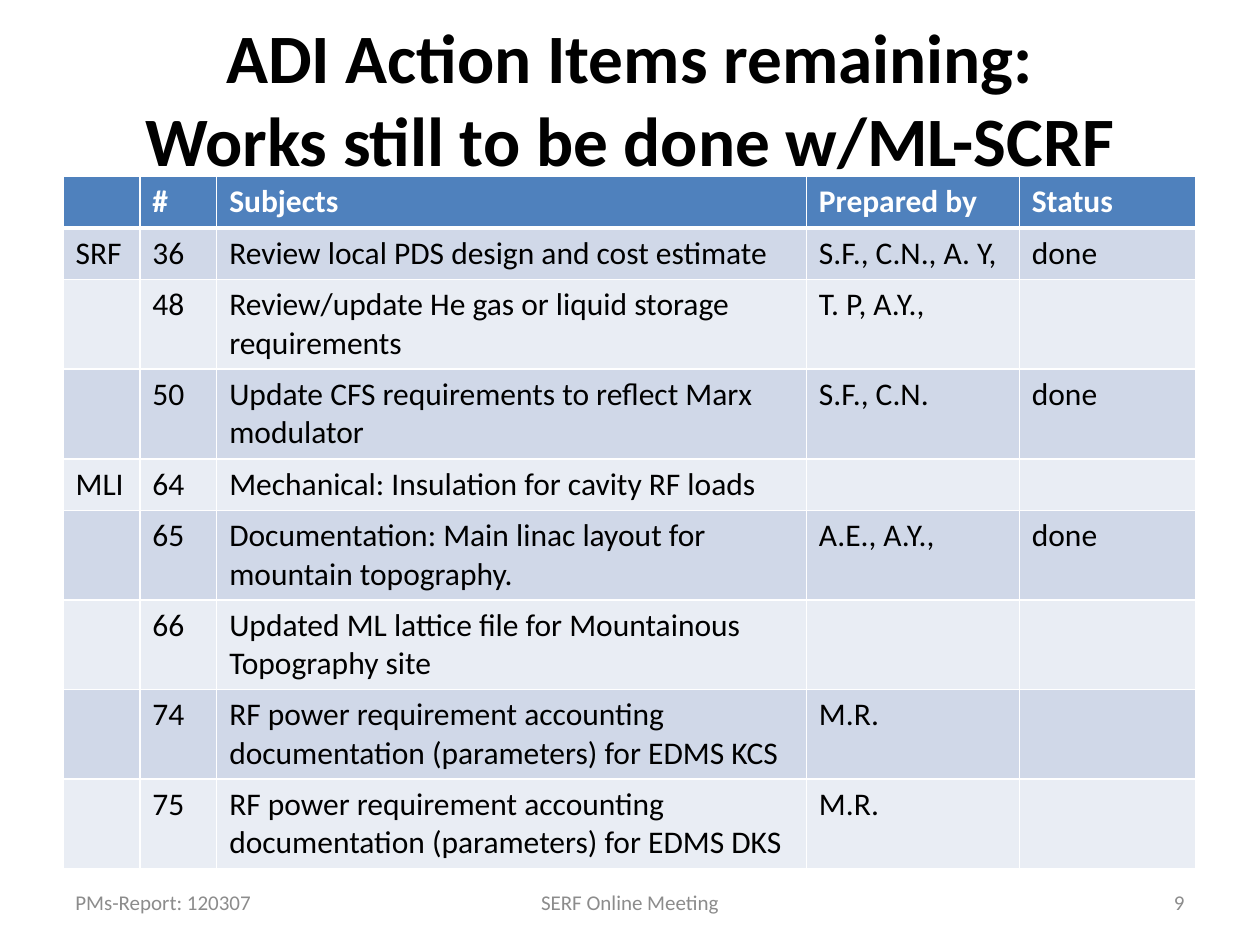
import pptx
import pptx.dml.color
import pptx.enum.text
import pptx.oxml
import pptx.oxml.ns
import pptx.util

RGB = pptx.dml.color.RGBColor
Inches = pptx.util.Inches
Pt = pptx.util.Pt
ALIGN = pptx.enum.text.PP_ALIGN
ANCHOR = pptx.enum.text.MSO_ANCHOR

BLACK = RGB(0x00, 0x00, 0x00)
WHITE = RGB(0xFF, 0xFF, 0xFF)
GREY = RGB(0x8C, 0x8C, 0x8C)
HEADER_BLUE = RGB(0x4F, 0x81, 0xBD)
BANDS = (RGB(0xD0, 0xD8, 0xE8), RGB(0xE9, 0xED, 0xF4))

WIDTH, HEIGHT = Inches(10), Inches(7.5)
MARGIN = 0.05  # share of the slide width
COLUMNS = (0.61, 0.61, 4.68, 1.69, 1.4)
ROW_HEIGHT = 0.41

TITLE_FONT = {"name": "Calibri", "size": Pt(39.6), "bold": True}
HEADER_FONT = {"name": "Calibri", "size": Pt(18), "bold": True}
BODY_FONT = {"name": "Calibri", "size": Pt(18), "bold": False}
FOOTER_FONT = {"name": "Calibri", "size": Pt(12)}

TITLE = "ADI Action Items remaining:\vWorks still to be done w/ML-SCRF"
HEADER = ("", "#", "Subjects", "Prepared by", "Status")
ACTION_ITEMS = (
    ("SRF", "36", "Review local PDS design and cost estimate", "S.F., C.N., A. Y,", "done"),
    ("", "48", "Review/update He gas or liquid storage requirements", "T. P, A.Y.,", ""),
    ("", "50", "Update CFS requirements to reflect Marx modulator", "S.F., C.N.", "done"),
    ("MLI", "64", "Mechanical: Insulation for cavity RF loads", "", ""),
    ("", "65", "Documentation: Main linac layout for mountain topography.", "A.E., A.Y.,", "done"),
    ("", "66", "Updated ML lattice file for Mountainous Topography site", "", ""),
    ("", "74", "RF power requirement accounting documentation (parameters) for EDMS KCS", "M.R.", ""),
    ("", "75", "RF power requirement accounting documentation (parameters) for EDMS DKS", "M.R.", ""),
)
# text, left share, width share, alignment
FOOTERS = (
    ("PMs-Report: 120307", MARGIN, 0.23, ALIGN.LEFT),
    ("SERF Online Meeting", 0.34, 0.32, ALIGN.CENTER),
    ("9", 0.72, 0.23, ALIGN.RIGHT),
)


def share_box(left, top, width, height):
    """Turn shares of the slide into left, top, width and height."""
    return (round(WIDTH * left), round(HEIGHT * top),
            round(WIDTH * width), round(HEIGHT * height))


def write(frame, text, font_format, color, align=ALIGN.LEFT):
    frame.text = text
    for paragraph in frame.paragraphs:
        paragraph.alignment = align
        for run in paragraph.runs:
            for key, value in font_format.items():
                setattr(run.font, key, value)
            run.font.color.rgb = color


def add_title(slide):
    title = slide.shapes.title
    title.left, title.top, title.width, title.height = share_box(MARGIN, 0.02, 0.9, 1 / 6)
    title.text_frame.auto_size = pptx.enum.text.MSO_AUTO_SIZE.NONE
    title.text_frame.vertical_anchor = ANCHOR.MIDDLE
    write(title.text_frame, TITLE, TITLE_FONT, BLACK, ALIGN.CENTER)


def set_borders(cell, **widths):
    """Draw white borders, with widths in points by side: L, R, T, B."""
    properties = cell._tc.get_or_add_tcPr()
    for side, width in widths.items():
        properties.append(pptx.oxml.parse_xml(
            f'<a:ln{side} {pptx.oxml.ns.nsdecls("a")} w="{Pt(width)}">'
            f'<a:solidFill><a:srgbClr val="{WHITE}"/></a:solidFill></a:ln{side}>'))


def fill_row(cells, texts, font_format, color, fill, top=1, bottom=1):
    for cell, text in zip(cells, texts):
        set_borders(cell, L=1, R=1, T=top, B=bottom)
        cell.fill.solid()
        cell.fill.fore_color.rgb = fill
        if text:
            write(cell.text_frame, text, font_format, color)


def add_action_table(slide):
    row_count = len(ACTION_ITEMS) + 1
    table = slide.shapes.add_table(
        row_count, len(COLUMNS), round(WIDTH * MARGIN), Inches(1.4),
        Inches(sum(COLUMNS)), Inches(ROW_HEIGHT * row_count)).table
    for column, width in zip(table.columns, COLUMNS):
        column.width = Inches(width)
    header, *body = table.rows
    fill_row(header.cells, HEADER, HEADER_FONT, WHITE, HEADER_BLUE, bottom=3)
    for index, (row, item) in enumerate(zip(body, ACTION_ITEMS)):
        fill_row(row.cells, item, BODY_FONT, BLACK, BANDS[index % 2],
                 top=1 if index else 3)


def add_footer(slide, text, left, width, align):
    frame = slide.shapes.add_textbox(*share_box(left, 0.93, width, 0.05)).text_frame
    frame.word_wrap = True
    frame.vertical_anchor = ANCHOR.MIDDLE
    write(frame, text, FOOTER_FONT, GREY, align)


def main():
    deck = pptx.Presentation()
    deck.slide_width, deck.slide_height = WIDTH, HEIGHT
    slide = deck.slides.add_slide(deck.slide_layouts.get_by_name("Title Only"))
    add_title(slide)
    add_action_table(slide)
    for footer in FOOTERS:
        add_footer(slide, *footer)
    deck.save("out.pptx")


if __name__ == "__main__":
    main()
